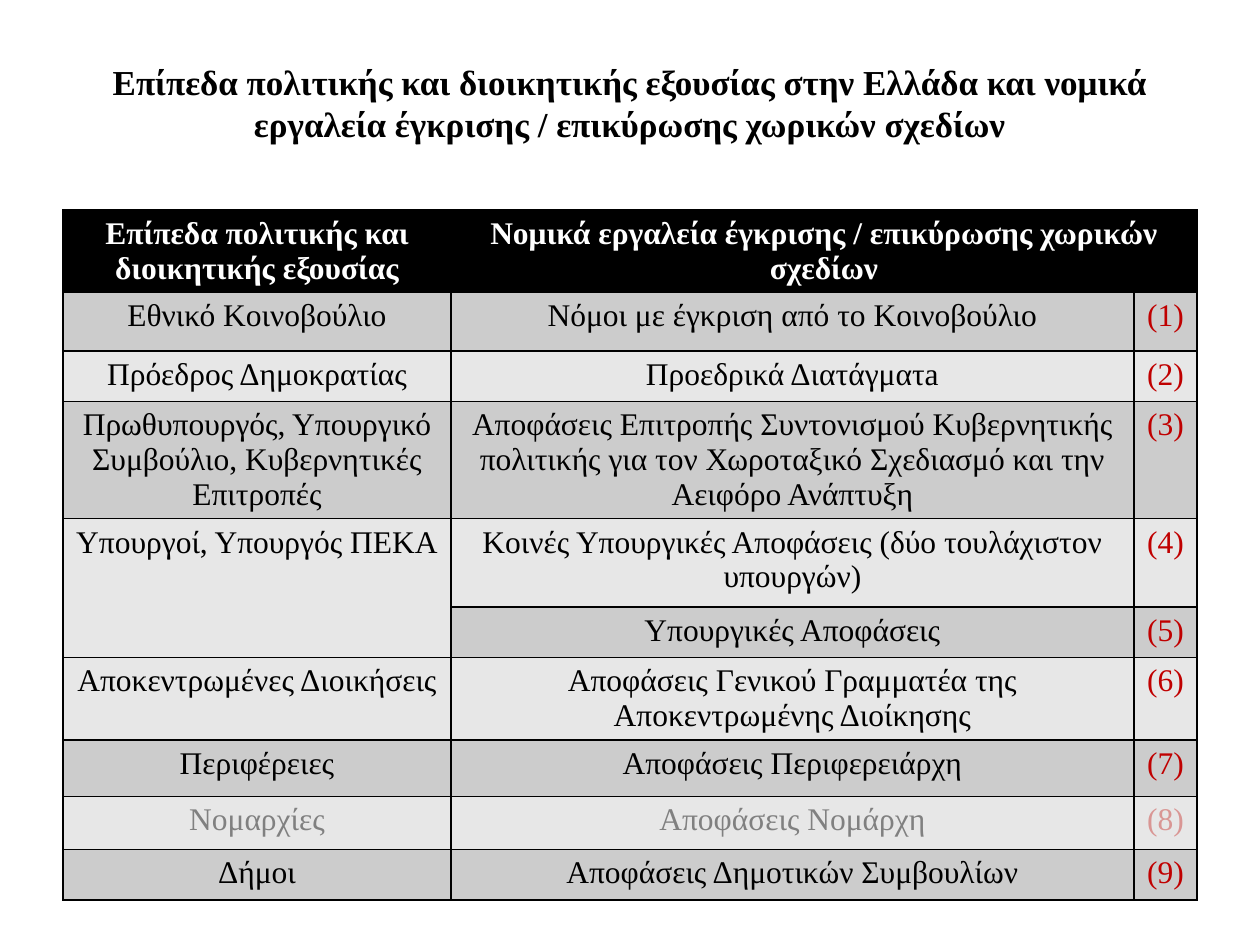
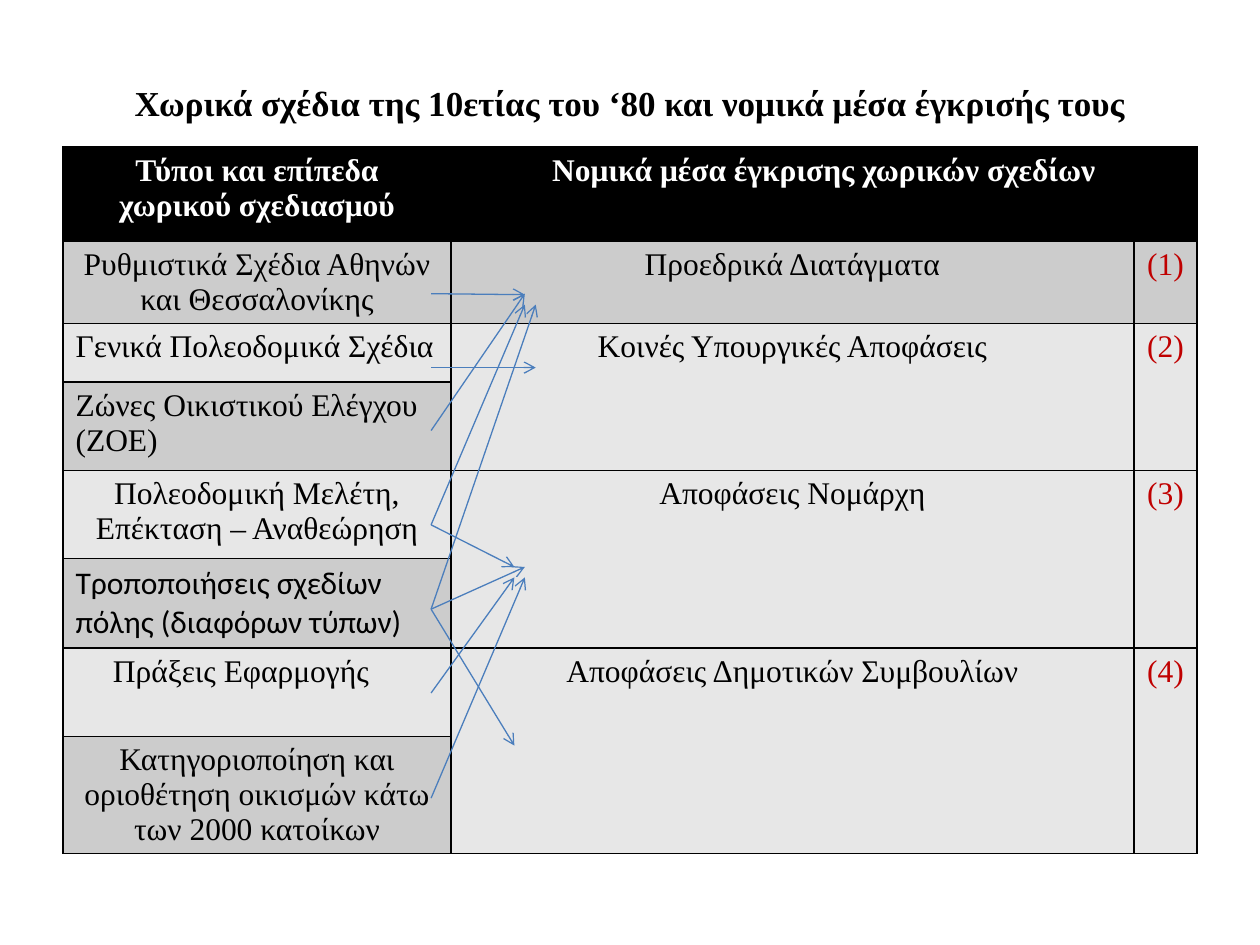
from dataclasses import dataclass

import pptx
import pptx.dml.color
import pptx.enum.shapes
import pptx.enum.text
import pptx.oxml
import pptx.oxml.ns
import pptx.presentation
import pptx.slide
import pptx.table
import pptx.text.text
import pptx.util
from lxml import etree

Cm = pptx.util.Cm
ALIGN = pptx.enum.text.PP_ALIGN


@dataclass(frozen=True)
class Theme:
    serif: str = "Times New Roman"
    sans: str = "Calibri"
    title_pt: int = 20
    cell_pt: int = 18
    border_pt: float = 1
    arrow_pt: float = 0.75
    ink: str = "000000"
    paper: str = "FFFFFF"
    dark_band: str = "CCCCCC"
    light_band: str = "E7E7E7"
    number: str = "C00000"
    muted_ink: str = "808080"
    muted_number: str = "D99694"
    arrow: str = "4B7EBC"


@dataclass(frozen=True)
class Row:
    height: float
    level: str = ""
    tool: str = ""
    muted: bool = False
    align: ALIGN = ALIGN.CENTER
    font: str = Theme.serif
    right_margin: float = 0.25


@dataclass(frozen=True)
class Arrow:
    y1: float
    x2: float
    y2: float


@dataclass(frozen=True)
class Page:
    title: str
    top: float
    rows: list[Row]
    arrows: list[Arrow]


THEME = Theme()
LEFT = 1.27
COLUMNS = (7.82, 13.77, 1.27)
ARROW_START = 8.69

PAGES = [
    Page(
        "Επίπεδα πολιτικής και διοικητικής εξουσίας στην Ελλάδα και νομικά "
        "εργαλεία έγκρισης / επικύρωσης χωρικών σχεδίων",
        4.23,
        [
            Row(1.66, "Επίπεδα πολιτικής και διοικητικής εξουσίας",
                "Νομικά εργαλεία έγκρισης / επικύρωσης χωρικών σχεδίων"),
            Row(1.18, "Εθνικό Κοινοβούλιο", "Νόμοι με έγκριση από το Κοινοβούλιο"),
            Row(1.02, "Πρόεδρος Δημοκρατίας", "Προεδρικά Διατάγματa"),
            Row(2.36, "Πρωθυπουργός, Υπουργικό Συμβούλιο, Κυβερνητικές Επιτροπές",
                "Αποφάσεις Επιτροπής Συντονισμού Κυβερνητικής πολιτικής για τον "
                "Χωροταξικό Σχεδιασμό και την Αειφόρο Ανάπτυξη"),
            Row(1.78, "Υπουργοί, Υπουργός ΠΕΚΑ",
                "Κοινές Υπουργικές Αποφάσεις (δύο τουλάχιστον υπουργών)"),
            Row(1.02, tool="Υπουργικές Αποφάσεις"),
            Row(1.66, "Αποκεντρωμένες Διοικήσεις",
                "Αποφάσεις Γενικού Γραμματέα της Αποκεντρωμένης Διοίκησης"),
            Row(1.14, "Περιφέρειες", "Αποφάσεις Περιφερειάρχη"),
            Row(1.07, "Νομαρχίες", "Αποφάσεις Νομάρχη", muted=True),
            Row(1.02, "Δήμοι", "Αποφάσεις Δημοτικών Συμβουλίων"),
        ],
        [],
    ),
    Page(
        "Χωρικά σχέδια της 10ετίας του ‘80 και νομικά μέσα έγκρισής τους",
        2.96,
        [
            Row(1.9, "Τύποι και επίπεδα χωρικού σχεδιασμού",
                "Νομικά μέσα έγκρισης χωρικών σχεδίων"),
            Row(1.66, "Ρυθμιστικά Σχέδια Αθηνών και Θεσσαλονίκης", "Προεδρικά Διατάγματα"),
            Row(1.18, "Γενικά Πολεοδομικά Σχέδια", "Κοινές Υπουργικές Αποφάσεις",
                align=ALIGN.LEFT),
            Row(1.78, "Ζώνες Οικιστικού Ελέγχου (ZOE)", align=ALIGN.LEFT),
            Row(1.78, "Πολεοδομική Μελέτη, Επέκταση – Αναθεώρηση", "Αποφάσεις Νομάρχη"),
            Row(1.8, "Τροποποιήσεις σχεδίων πόλης (διαφόρων τύπων)",
                align=ALIGN.LEFT, font=THEME.sans),
            Row(1.78, "Πράξεις Εφαρμογής", "Αποφάσεις Δημοτικών Συμβουλίων",
                right_margin=0.9),
            Row(2.36, "Κατηγοριοποίηση και οριοθέτηση οικισμών κάτω των 2000 κατοίκων"),
        ],
        [
            Arrow(5.92, 10.58, 5.94),
            Arrow(8.68, 10.58, 5.92),
            Arrow(10.58, 10.58, 6.14),
            Arrow(12.28, 10.58, 11.43),
            Arrow(12.28, 10.8, 6.14),
            Arrow(13.97, 10.37, 11.64),
            Arrow(16.09, 10.58, 11.64),
            Arrow(7.41, 10.8, 7.41),
            Arrow(12.28, 10.37, 15.03),
            Arrow(10.58, 10.37, 11.43),
        ],
    ),
]


def rgb(color: str) -> pptx.dml.color.RGBColor:
    return pptx.dml.color.RGBColor.from_string(color)


def write(tf: pptx.text.text.TextFrame, text: str, size: int, color: str,
          bold: bool = False, font: str = THEME.serif,
          align: ALIGN = ALIGN.CENTER) -> None:
    tf.text = text
    p = tf.paragraphs[0]
    p.alignment = align
    p.font.name = font
    p.font.size = pptx.util.Pt(size)
    p.font.bold = bold
    p.font.color.rgb = rgb(color)


def style_cell(cell: pptx.table._Cell, fill: str) -> None:
    tc_pr = cell._tc.get_or_add_tcPr()
    width = pptx.util.Pt(THEME.border_pt)
    for side in ("lnL", "lnR", "lnT", "lnB"):
        tc_pr.append(pptx.oxml.parse_xml(
            f'<a:{side} {pptx.oxml.ns.nsdecls("a")} w="{width}"><a:solidFill>'
            f'<a:srgbClr val="{THEME.ink}"/></a:solidFill></a:{side}>'))
    cell.fill.solid()
    cell.fill.fore_color.rgb = rgb(fill)


def add_title(s: pptx.slide.Slide, text: str) -> None:
    sp = s.shapes.title
    sp.left, sp.top, sp.width, sp.height = Cm(LEFT), Cm(0.76), Cm(22.86), Cm(2.62)
    sp.text_frame.vertical_anchor = pptx.enum.text.MSO_ANCHOR.MIDDLE
    write(sp.text_frame, text, THEME.title_pt, THEME.ink, bold=True)


def add_levels_table(s: pptx.slide.Slide, page: Page) -> None:
    tbl = s.shapes.add_table(
        len(page.rows), len(COLUMNS), Cm(LEFT), Cm(page.top),
        Cm(sum(COLUMNS)), Cm(sum(row.height for row in page.rows))).table
    tbl.horz_banding = False
    for column, width in zip(tbl.columns, COLUMNS):
        column.width = Cm(width)

    number = 0
    for i, row in enumerate(page.rows):
        tbl.rows[i].height = Cm(row.height)
        header = i == 0
        if header:
            fill, ink = THEME.ink, THEME.paper
        else:
            fill = THEME.dark_band if i % 2 else THEME.light_band
            ink = THEME.muted_ink if row.muted else THEME.ink
        for c in range(len(COLUMNS)):
            style_cell(tbl.cell(i, c), fill)

        if row.level:
            cell = tbl.cell(i, 0)
            cell.margin_right = Cm(row.right_margin)
            write(cell.text_frame, row.level, THEME.cell_pt, ink, header, row.font, row.align)
        else:
            tbl.cell(i - 1, 0).merge(tbl.cell(i, 0))

        if row.tool:
            write(tbl.cell(i, 1).text_frame, row.tool, THEME.cell_pt, ink, header)
        else:
            for c in (1, 2):
                tbl.cell(i - 1, c).merge(tbl.cell(i, c))

        if header:
            tbl.cell(i, 1).merge(tbl.cell(i, 2))
        elif row.tool:
            number += 1
            color = THEME.muted_number if row.muted else THEME.number
            write(tbl.cell(i, 2).text_frame, f"({number})", THEME.cell_pt, color)


def add_arrow(s: pptx.slide.Slide, arrow: Arrow) -> None:
    sp = s.shapes.add_connector(
        pptx.enum.shapes.MSO_CONNECTOR.STRAIGHT,
        Cm(ARROW_START), Cm(arrow.y1), Cm(arrow.x2), Cm(arrow.y2))
    sp.line.color.rgb = rgb(THEME.arrow)
    sp.line.width = pptx.util.Pt(THEME.arrow_pt)
    qn = pptx.oxml.ns.qn
    etree.SubElement(sp.line._get_or_add_ln(), qn("a:tailEnd"), type="arrow")
    etree.SubElement(sp._element.spPr, qn("a:effectLst"))


def add_page(prs: pptx.presentation.Presentation, page: Page) -> None:
    s = prs.slides.add_slide(prs.slide_layouts.get_by_name("Title Only"))
    add_title(s, page.title)
    add_levels_table(s, page)
    for arrow in page.arrows:
        add_arrow(s, arrow)


def main() -> None:
    prs = pptx.Presentation()
    prs.slide_width, prs.slide_height = Cm(25.4), Cm(19.05)
    for page in PAGES:
        add_page(prs, page)
    prs.save("out.pptx")


if __name__ == "__main__":
    main()
